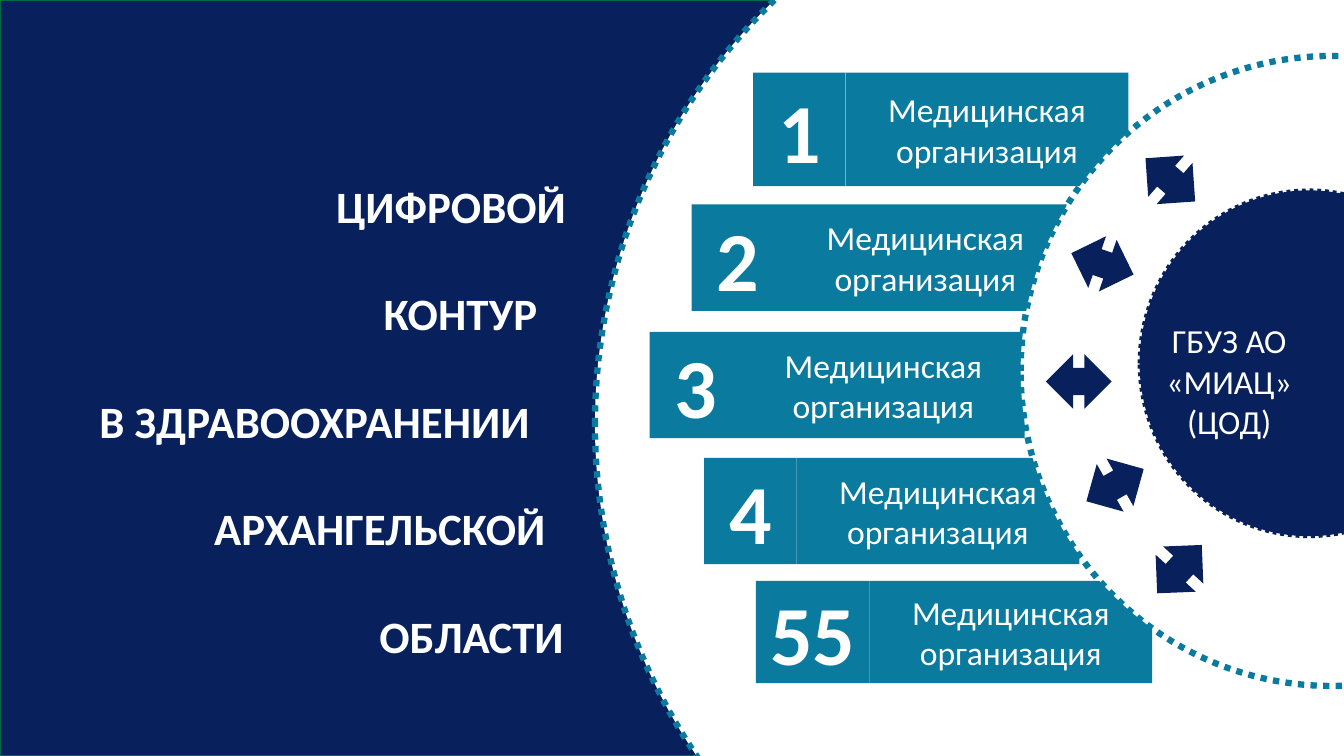
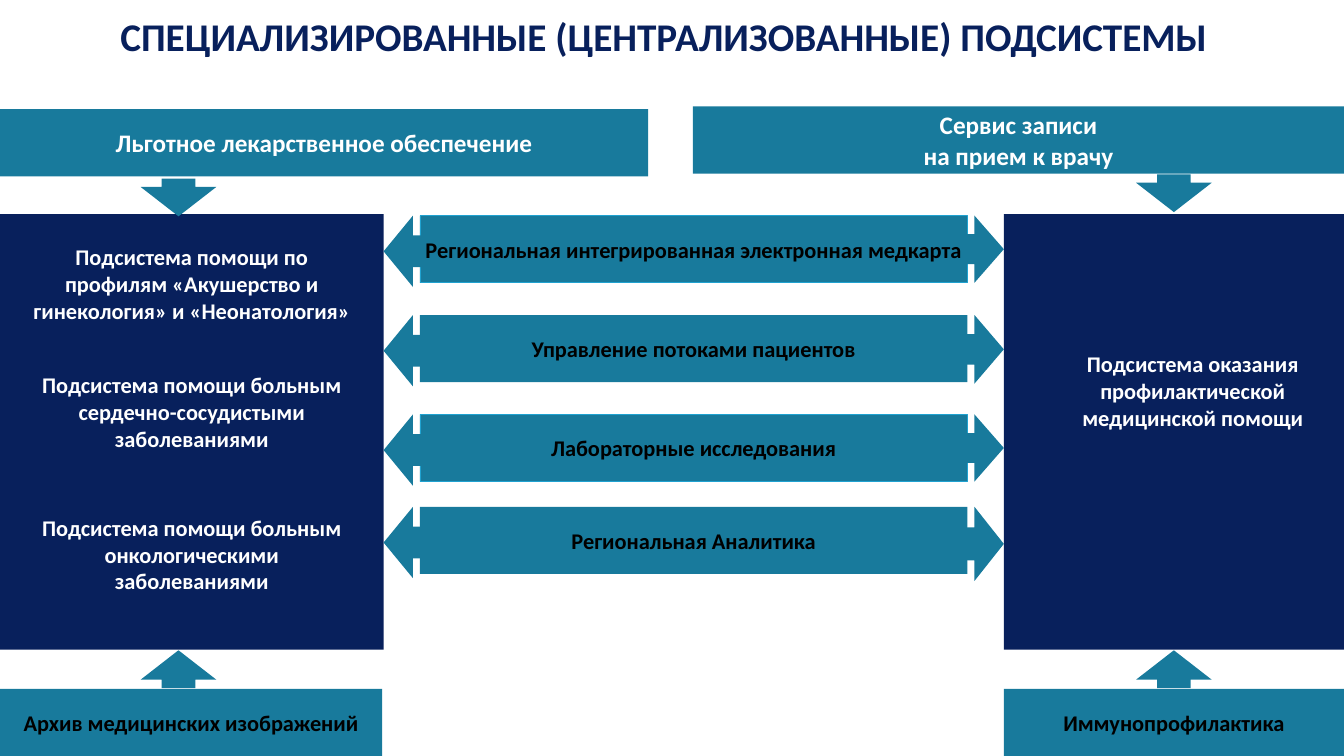
from pptx import Presentation
from pptx.dml.color import RGBColor
from pptx.enum.dml import MSO_LINE
from pptx.enum.shapes import MSO_SHAPE
from pptx.enum.text import MSO_ANCHOR, MSO_AUTO_SIZE, PP_ALIGN
from pptx.util import Pt

NAVY = RGBColor(0x08, 0x20, 0x5C)
TEAL = RGBColor(0x0A, 0x7B, 0x9E)
STEEL = RGBColor(0x18, 0x7A, 0x9C)
SKY = RGBColor(0x20, 0xA2, 0xD0)
GREEN = RGBColor(0x01, 0x6B, 0x48)
WHITE = RGBColor(0xFF, 0xFF, 0xFF)
BLACK = RGBColor(0, 0, 0)
RECT = MSO_SHAPE.RECTANGLE
OVAL = MSO_SHAPE.OVAL
ARROW = MSO_SHAPE.RIGHT_ARROW
DOUBLE = MSO_SHAPE.UP_DOWN_ARROW
DOTS = MSO_LINE.ROUND_DOT
TOP, MIDDLE = MSO_ANCHOR.TOP, MSO_ANCHOR.MIDDLE
LEFT, CENTER = PP_ALIGN.LEFT, PP_ALIGN.CENTER
NO_FIT = MSO_AUTO_SIZE.NONE
FONT = "Calibri"
TITLE_ONLY = 5


def write(shape, words, size, hue, bold=True, align=CENTER, anchor=MIDDLE, inset=3):
    frame = shape.text_frame
    frame.text = words
    frame.word_wrap = True
    frame.auto_size = NO_FIT
    frame.vertical_anchor = anchor
    frame.margin_left = frame.margin_right = Pt(inset)
    frame.margin_top = frame.margin_bottom = Pt(3)
    for para in frame.paragraphs:
        para.alignment = align
        para.font.name = FONT
        para.font.size = Pt(size)
        para.font.bold = bold
        para.font.color.rgb = hue


def draw(slide, kind, spot, fill=None, line=None, width=1, turn=0):
    shape = slide.shapes.add_shape(kind, *map(Pt, spot))
    shape.shadow.inherit = False
    shape.rotation = turn
    if fill is None:
        shape.fill.background()
    else:
        shape.fill.solid()
        shape.fill.fore_color.rgb = fill
    if line is None:
        shape.line.fill.background()
    else:
        shape.line.color.rgb = line
        shape.line.width = Pt(width)
    return shape


deck = Presentation()
deck.slide_width, deck.slide_height = Pt(960), Pt(540)
layout = deck.slide_layouts[TITLE_ONLY]

cover = deck.slides.add_slide(layout)
draw(cover, RECT, (0, 0, 930, 540), NAVY, GREEN)
arc = draw(cover, OVAL, (425, -114, 820, 834), WHITE, TEAL, 4.5)
arc.line.dash_style = DOTS

clinics = [
    ("1", 538, 52, 66, 81),
    ("2", 494, 146, 66, 76),
    ("3", 464, 237, 66, 76),
    ("4", 503, 327, 66, 76),
    ("55", 540, 415, 81, 73),
]
for number, x, y, w, h in clinics:
    label = draw(cover, RECT, (x + w, y, 202, h), TEAL)
    write(label, "Медицинская организация", 24, WHITE, bold=False, inset=7)
    badge = draw(cover, RECT, (x, y, w, h), TEAL)
    write(badge, number, 60, WHITE, inset=7)

ring = draw(cover, OVAL, (729, 40, 444, 450), WHITE, TEAL, 4.5)
hub = draw(cover, OVAL, (814, 136, 242, 247), NAVY, NAVY, 2.75)
for circle in (ring, hub):
    circle.line.dash_style = DOTS

for x, y, turn in [(816.5, 105, 311), (768, 165, 289), (751, 249, 270),
                   (777, 323, 240.6), (823, 383, 222.7)]:
    draw(cover, DOUBLE, (x, y, 39, 47), NAVY, turn=turn)
center = draw(cover, RECT, (822, 225, 112, 94))
write(center, "ГБУЗ АО «МИАЦ»\n(ЦОД)", 24, WHITE, bold=False, inset=7)

lines = [("ЦИФРОВОЙ", 240), ("КОНТУР", 274), ("В ЗДРАВООХРАНЕНИИ", 71),
         ("АРХАНГЕЛЬСКОЙ", 153), ("ОБЛАСТИ", 271)]
title = cover.shapes.title
title.left, title.top, title.width, title.height = map(Pt, (0, 86, 420, 395))
write(title, "\n".join(words for words, _ in lines), 32, WHITE,
      align=LEFT, anchor=TOP, inset=0)
for para, (_, indent) in zip(title.text_frame.paragraphs, lines):
    para.line_spacing = 2.0
    para._p.get_or_add_pPr().set("marL", str(Pt(indent)))
cover.shapes._spTree.append(title._element)

scheme = deck.slides.add_slide(layout)
title = scheme.shapes.title
title.left, title.top, title.width, title.height = map(Pt, (0, 6, 948, 41))
write(title, "СПЕЦИАЛИЗИРОВАННЫЕ (ЦЕНТРАЛИЗОВАННЫЕ) ПОДСИСТЕМЫ", 28, NAVY, anchor=TOP)

draw(scheme, RECT, (717, 153, 243, 311), NAVY)
draw(scheme, RECT, (0, 153, 274, 311), NAVY)
parts = [
    ((19, 171, 236, 66), TOP, "Подсистема помощи по профилям «Акушерство и гинекология» и «Неонатология»"),
    ((19, 262, 236, 90), TOP, "Подсистема помощи больным сердечно-сосудистыми заболеваниями"),
    ((19, 364, 236, 81), TOP, "Подсистема помощи больным онкологическими заболеваниями"),
    ((746, 238, 212, 82), MIDDLE, "Подсистема оказания профилактической медицинской помощи"),
]
for spot, anchor, words in parts:
    write(draw(scheme, RECT, spot), words, 16, WHITE, anchor=anchor)

bands = [
    ((0, 78, 463, 48), "Льготное лекарственное обеспечение", 18, WHITE),
    ((495, 76, 465, 48), "Сервис записи\nна прием к врачу", 18, WHITE),
    ((0, 492, 273, 48), "Архив медицинских изображений", 16, BLACK),
    ((717, 492, 243, 48), "Иммунопрофилактика", 16, BLACK),
]
for spot, words, size, hue in bands:
    write(draw(scheme, RECT, spot, STEEL), words, size, hue)

arrows = [(114, 114, 27, 54, 90), (825, 111, 27, 54, 90),
          (114, 451, 27, 54, 270), (825, 451, 27, 54, 270)]
flows = [
    (154, 48, SKY, "Региональная интегрированная электронная медкарта"),
    (225, 49, None, "Управление потоками пациентов"),
    (296, 48, SKY, "Лабораторные исследования"),
    (362, 53, None, "Региональная Аналитика"),
]
for y, h, edge, words in flows:
    bar = draw(scheme, RECT, (300, y, 391, 48), STEEL, edge, 0.5)
    write(bar, words, 16, BLACK)
    arrows += [(274, y, 27, 51, 180), (690, y, 27, h, 0)]
for x, y, w, h, turn in arrows:
    arrow = draw(scheme, ARROW, (x, y, w, h), STEEL, turn=turn)
    arrow.adjustments[0] = 0.445
    arrow.adjustments[1] = 0.776

deck.save("out.pptx")
